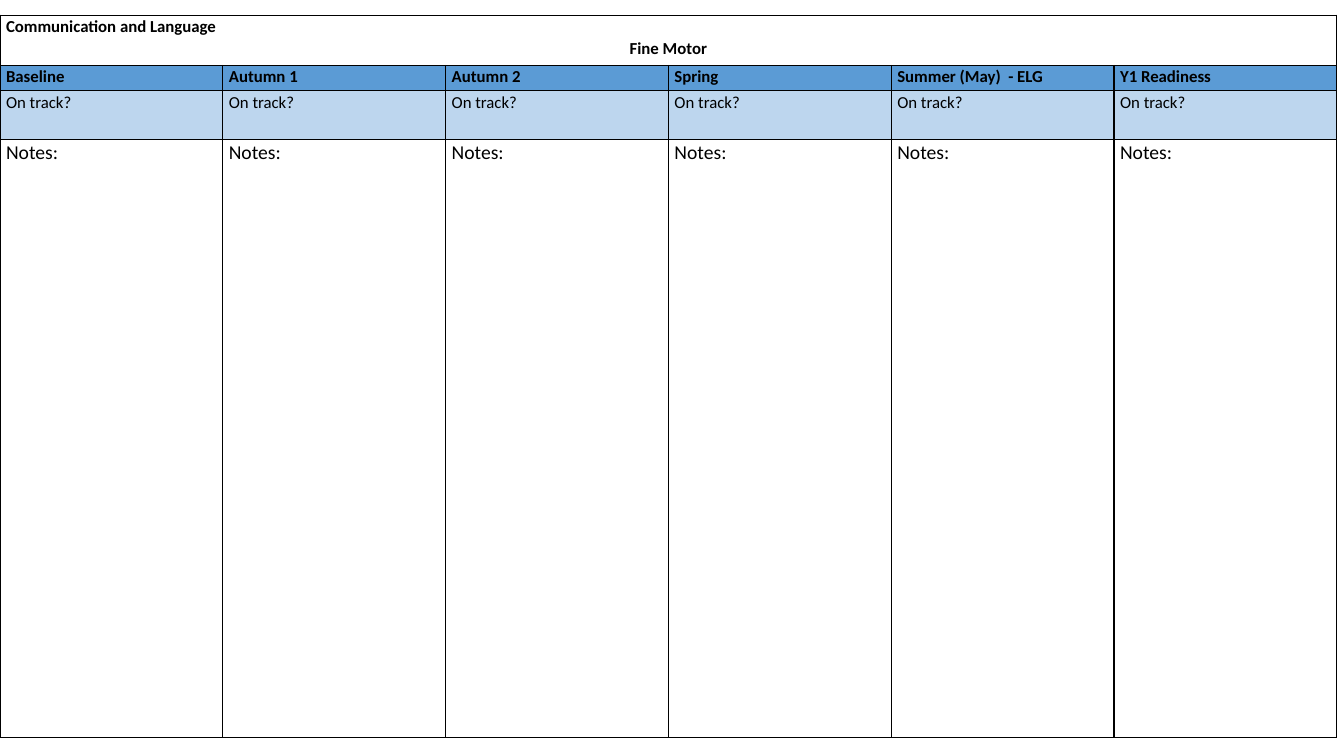
from pptx import Presentation
from pptx.dml.color import RGBColor
from pptx.enum.text import PP_ALIGN as Align
from pptx.oxml import parse_xml
from pptx.oxml.ns import nsdecls
from pptx.util import Inches, Pt

BLACK = RGBColor(0x00, 0x00, 0x00)
HEADER_BLUE = RGBColor(0x5B, 0x9B, 0xD5)
TRACK_BLUE = RGBColor(0xBD, 0xD6, 0xEE)

AREA = "Communication and Language"
STRAND = "Fine Motor"
TERMS = ["Baseline", "Autumn 1", "Autumn 2", "Spring", "Summer (May)  - ELG", "Y1 Readiness"]
COLUMN_WIDTH = 2.21
ROW_HEIGHTS = [0.5, 0.25, 0.48, 5.94]


class TrackerPage:
    """Holds the table style and the current slide."""

    font = "Calibri"
    line_spacing = 1.07
    side_margin = Inches(0.06)
    border = Pt(1)

    def __init__(self, deck):
        """Add a blank page to the deck."""
        self.page = deck.slides.add_slide(deck.slide_layouts[6])

    def grid(self, top, column_count, column_width, row_heights):
        """Add a plain bordered table at the left edge and return it."""
        frame = self.page.shapes.add_table(
            len(row_heights), column_count, 0, Inches(top),
            Inches(column_width * column_count), Inches(sum(row_heights)))
        table = frame.table
        table.first_row = table.horz_banding = False
        for column in table.columns:
            column.width = Inches(column_width)
        for row, height in zip(table.rows, row_heights):
            row.height = Inches(height)
            for cell in row.cells:
                self.outline(cell)
                cell.fill.background()
        return table

    def outline(self, cell):
        """Draw a line on all four sides of a cell and set its margins."""
        cell.margin_left = cell.margin_right = self.side_margin
        cell.margin_top = cell.margin_bottom = 0
        properties = cell._tc.get_or_add_tcPr()
        for side in ("lnL", "lnR", "lnT", "lnB"):
            properties.append(parse_xml(
                f'<a:{side} {nsdecls("a")} w="{self.border}"><a:solidFill>'
                f'<a:srgbClr val="{BLACK}"/></a:solidFill></a:{side}>'))

    def add_text(self, para, text, size=12, bold=False, align=Align.LEFT):
        """Add one styled run to a paragraph."""
        para.alignment = align
        para.line_spacing = self.line_spacing
        span = para.add_run()
        span.text = text
        span.font.name = self.font
        span.font.size = Pt(size)
        span.font.bold = bold
        span.font.color.rgb = BLACK

    def fill_row(self, row, texts, colour=None, **style):
        """Put one text into each cell of a row, with an optional fill."""
        for cell, text in zip(row.cells, texts):
            if colour is not None:
                cell.fill.solid()
                cell.fill.fore_color.rgb = colour
            self.add_text(cell.text_frame.paragraphs[0], text, **style)

    def heading(self, table):
        """Merge the first row and put the area and strand in it."""
        cell = table.cell(0, 0)
        cell.merge(table.cell(0, len(table.columns) - 1))
        self.add_text(cell.text_frame.paragraphs[0], AREA, bold=True)
        self.add_text(cell.text_frame.add_paragraph(), STRAND, bold=True, align=Align.CENTER)


def main():
    """Build the progress tracker and save it."""
    deck = Presentation()
    deck.slide_width, deck.slide_height = Inches(13.33), Inches(7.5)
    tracker = TrackerPage(deck)
    count = len(TERMS)
    table = tracker.grid(0.15, count, COLUMN_WIDTH, ROW_HEIGHTS)
    tracker.heading(table)
    tracker.fill_row(table.rows[1], TERMS, HEADER_BLUE, bold=True)
    tracker.fill_row(table.rows[2], ["On track?"] * count, TRACK_BLUE)
    tracker.fill_row(table.rows[3], ["Notes:"] * count, size=14)
    deck.save("out.pptx")


if __name__ == "__main__":
    main()
